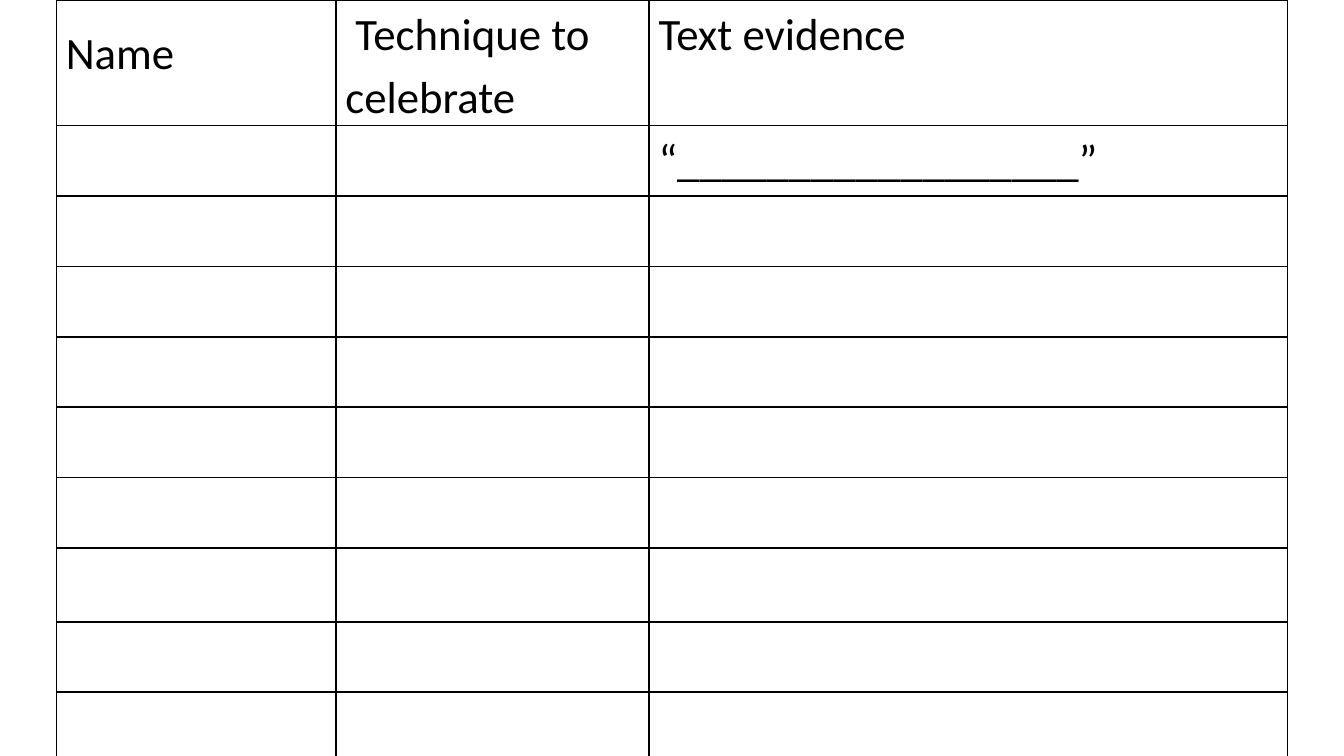
from lxml.etree import SubElement
from pptx import Presentation
from pptx.dml.color import RGBColor
from pptx.oxml.ns import qn
from pptx.util import Inches, Pt

BLACK = RGBColor(0x00, 0x00, 0x00)
WHITE = RGBColor(0xFF, 0xFF, 0xFF)
SLIDE_WIDTH = Inches(10)
SLIDE_HEIGHT = SLIDE_WIDTH * 9 // 16
COLUMN_WIDTHS = [Inches(width) for width in (2.08, 2.33, 4.75)]
ENTRY_HEIGHT = Inches(4.19) // 8
ROW_HEIGHTS = [Inches(0.93)] + [ENTRY_HEIGHT] * 6 + [Inches(0.55)] + [ENTRY_HEIGHT] * 2
HEADINGS = ["Name", " Technique to celebrate", "Text evidence"]
EVIDENCE_BLANK = "“__________________”"
CELL_FORMAT = {
    "margin_left": Inches(0.07),
    "margin_right": Inches(0.07),
    "margin_top": 0,
    "margin_bottom": 0,
}
FONT_FORMAT = {"name": "Calibri", "size": Pt(24)}


def set_attributes(target, values):
    for name, value in values.items():
        setattr(target, name, value)


def add_borders(cell):
    properties = cell._tc.get_or_add_tcPr()
    for side in ("lnL", "lnR", "lnT", "lnB"):
        border = SubElement(properties, qn(f"a:{side}"), w=str(Pt(1)))
        fill = SubElement(border, qn("a:solidFill"))
        SubElement(fill, qn("a:srgbClr"), val=str(BLACK))


def format_cell(cell):
    set_attributes(cell, CELL_FORMAT)
    add_borders(cell)
    cell.fill.solid()
    cell.fill.fore_color.rgb = WHITE


def write_cell(cell, text, line_spacing=1.15):
    paragraph = cell.text_frame.paragraphs[0]
    paragraph.line_spacing = line_spacing
    entry = paragraph.add_run()
    entry.text = text
    set_attributes(entry.font, FONT_FORMAT)
    entry.font.color.rgb = BLACK


def add_worksheet(slide, left, top, width, height):
    worksheet = slide.shapes.add_table(
        len(ROW_HEIGHTS), len(COLUMN_WIDTHS), left, top, width, height
    ).table
    set_attributes(worksheet, {"first_row": False, "horz_banding": False})
    for column, column_width in zip(worksheet.columns, COLUMN_WIDTHS):
        column.width = column_width
    for row, row_height in zip(worksheet.rows, ROW_HEIGHTS):
        row.height = row_height
    for cell in worksheet.iter_cells():
        format_cell(cell)
    for index, heading in enumerate(HEADINGS):
        write_cell(worksheet.cell(0, index), heading, 1.15 if index else 1.5)
    write_cell(worksheet.cell(1, 2), EVIDENCE_BLANK)


def main():
    presentation = Presentation()
    presentation.slide_width = SLIDE_WIDTH
    presentation.slide_height = SLIDE_HEIGHT
    slide = presentation.slides.add_slide(presentation.slide_layouts[6])
    add_worksheet(slide, Inches(0.42), 0, sum(COLUMN_WIDTHS), sum(ROW_HEIGHTS))
    presentation.save("out.pptx")


if __name__ == "__main__":
    main()
